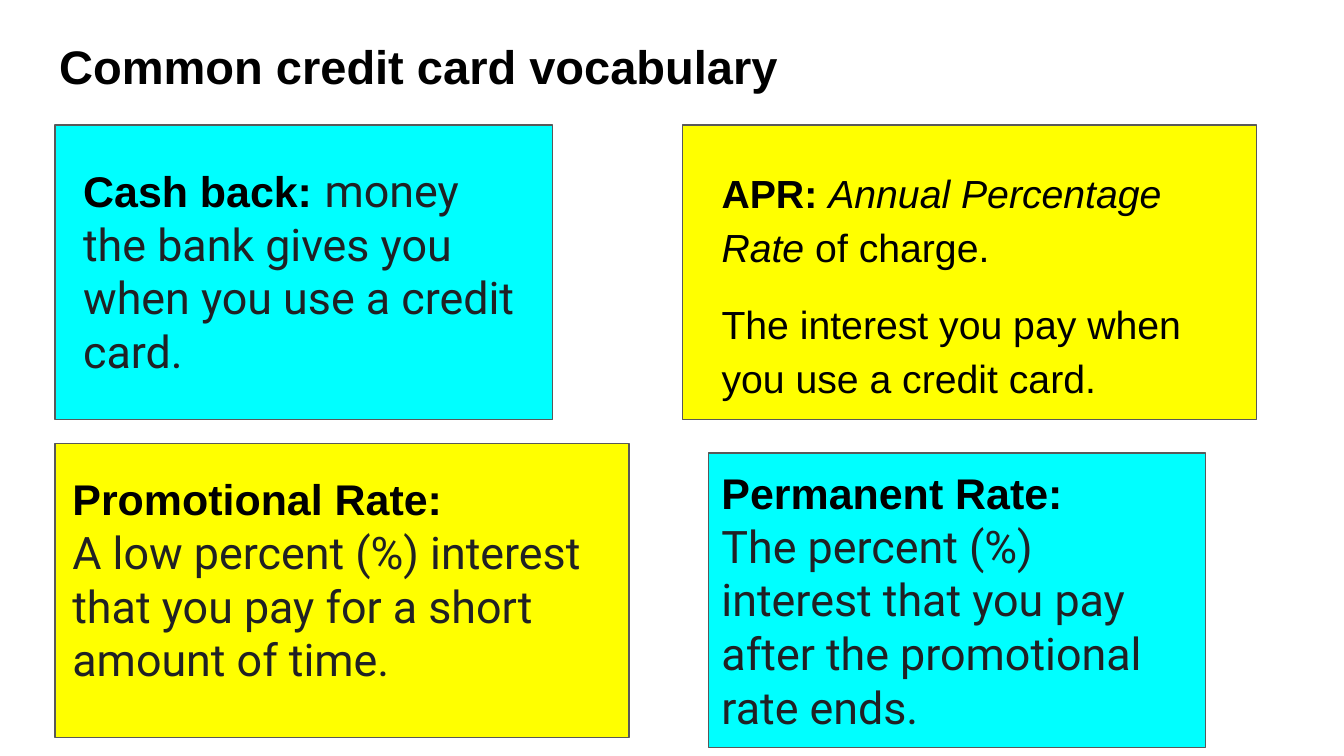
from pptx import Presentation
from pptx.dml.color import RGBColor
from pptx.enum.shapes import MSO_SHAPE
from pptx.enum.text import MSO_ANCHOR, PP_ALIGN
from pptx.util import Inches, Pt

RECTANGLE = MSO_SHAPE.RECTANGLE
TOP, MIDDLE, BOTTOM = MSO_ANCHOR.TOP, MSO_ANCHOR.MIDDLE, MSO_ANCHOR.BOTTOM
LEFT = PP_ALIGN.LEFT
CYAN, YELLOW, GRAY = "00FFFF", "FFFF00", "595959"
BLACK, CHARCOAL = "000000", "202124"


def color(hex_string):
    return RGBColor.from_string(hex_string)


def write(shape, paragraphs, anchor=TOP, line_spacing=1.0, space=0):
    """Fill a shape with paragraphs, each a list of (text, style) spans."""
    frame = shape.text_frame
    frame.word_wrap = True
    frame.vertical_anchor = anchor
    frame.margin_left = frame.margin_right = Inches(0.1)
    frame.margin_top = frame.margin_bottom = Inches(0.1)
    for index, spans in enumerate(paragraphs):
        para = frame.add_paragraph() if index else frame.paragraphs[0]
        para.alignment = LEFT
        para.line_spacing = line_spacing
        para.space_before = Pt(space if index else 0)
        para.space_after = Pt(space if index else 0)
        for text, style in spans:
            span = para.add_run()
            span.text = text
            span.font.name = style.get("font", "Arial")
            span.font.size = Pt(style["size"])
            span.font.bold = style.get("bold", False)
            span.font.italic = style.get("italic", False)
            span.font.color.rgb = color(style.get("ink", BLACK))


# Text styles
heading = {"size": 25.2, "bold": True}
term = {"size": 23, "bold": True}
meaning = {"size": 24, "font": "Roboto", "ink": CHARCOAL}
apr_text = {"size": 21}
apr_term = {"size": 21, "bold": True}
apr_name = {"size": 21, "italic": True}

# A 16:9 page
deck = Presentation()
deck.slide_width = Inches(10)
deck.slide_height = Inches(10 * 9 / 16)
page = deck.slides.add_slide(deck.slide_layouts[5])

# Title
title = page.shapes.title
title.left, title.top = Inches(0.34), Inches(0.17)
title.width, title.height = Inches(9.32), Inches(0.63)
write(title, [[("Common credit card vocabulary", heading)]], anchor=BOTTOM)

# Colored cards: left, top, width, fill
cards = []
for left, top, width, fill in [
    (0.41, 3.3, 4.27, YELLOW),
    (0.41, 0.93, 3.7, CYAN),
    (5.08, 0.93, 4.27, YELLOW),
    (5.27, 3.37, 3.7, CYAN),
]:
    card = page.shapes.add_shape(
        RECTANGLE, Inches(left), Inches(top), Inches(width), Inches(2.19))
    card.shadow.inherit = False
    card.fill.solid()
    card.fill.fore_color.rgb = color(fill)
    card.line.color.rgb = color(GRAY)
    card.line.width = Pt(0.75)
    cards.append(card)

# Definitions laid over the first three cards
apr = [
    [("APR: ", apr_term), ("Annual Percentage Rate ", apr_name),
     ("of charge.", apr_text)],
    [("The interest you pay when you use a credit card.", apr_text)],
]
cash_back = [
    [("Cash back: ", term),
     ("money the bank gives you when you use a credit card.", meaning)],
]
promotional = [
    [("Promotional Rate:", term)],
    [("A low percent (%) interest that you pay for a short amount of time.",
      meaning)],
]
for left, top, width, height, paragraphs, layout in [
    (5.27, 1.11, 3.89, 1.94, apr, {"line_spacing": 1.15, "space": 12}),
    (0.52, 1.11, 3.48, 1.82, cash_back, {}),
    (0.44, 3.42, 3.98, 1.8, promotional, {}),
]:
    box = page.shapes.add_textbox(
        Inches(left), Inches(top), Inches(width), Inches(height))
    write(box, paragraphs, **layout)

# Definition inside the last card
permanent = [
    [("Permanent Rate:", term)],
    [("The percent (%) interest that you pay after the promotional rate ends.",
      meaning)],
]
write(cards[-1], permanent, anchor=MIDDLE)

deck.save("out.pptx")
